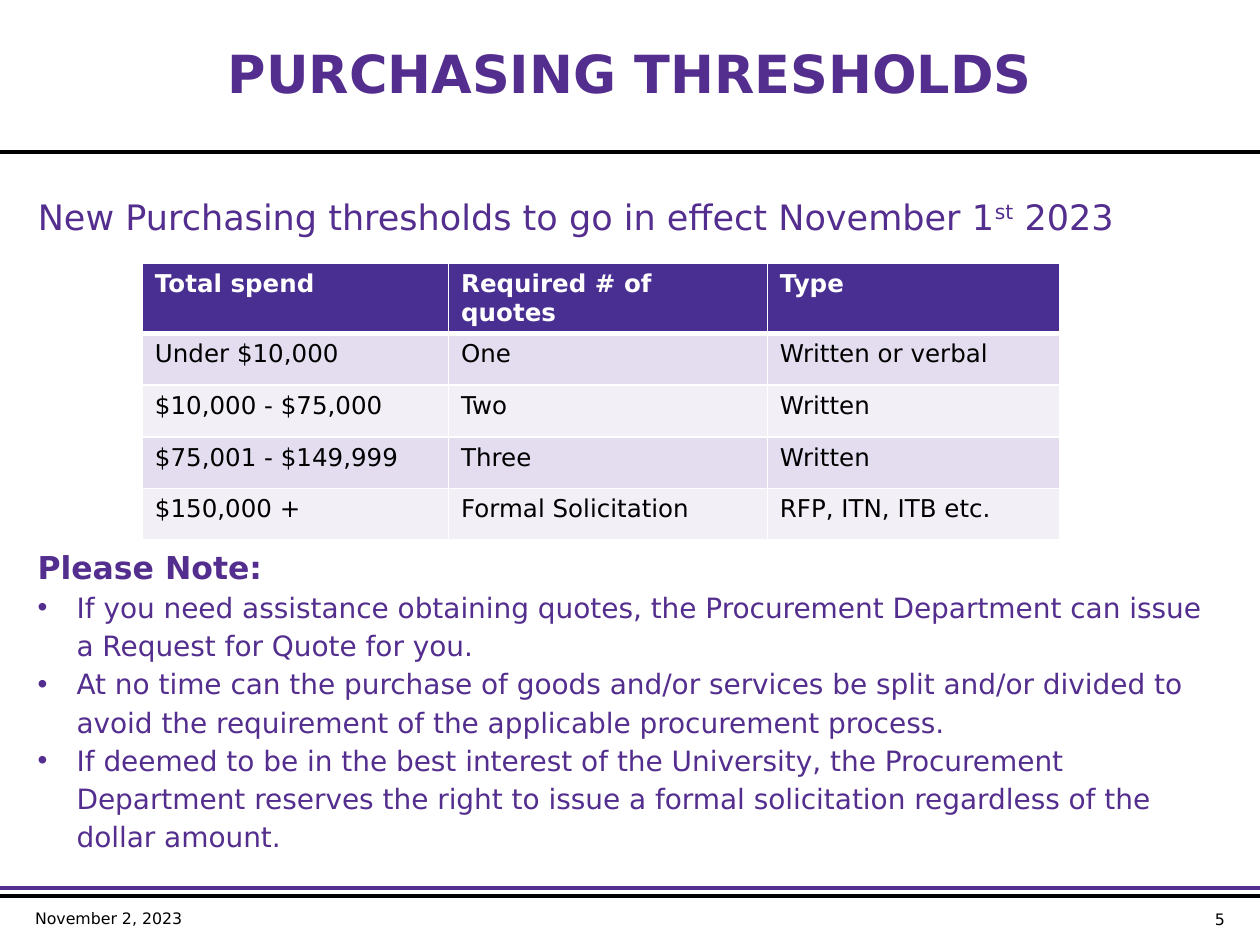
import dataclasses
import typing

import lxml.etree
import pptx
import pptx.dml.color
import pptx.enum.shapes
import pptx.enum.text
import pptx.oxml.ns
import pptx.util

Inches = pptx.util.Inches
Pt = pptx.util.Pt
Align = pptx.enum.text.PP_ALIGN
Anchor = pptx.enum.text.MSO_ANCHOR
qn = pptx.oxml.ns.qn


@dataclasses.dataclass(frozen=True)
class Theme:
    font: str = "DejaVu Sans"
    purple: str = "542E8E"
    header_fill: str = "492F92"
    band_fills: tuple = ("E3DDEF", "F2EFF7")
    black: str = "000000"
    white: str = "FFFFFF"
    title_size: float = 30
    lead_size: float = 20
    note_size: float = 18
    bullet_size: float = 16
    table_size: float = 14
    footer_size: float = 9
    rule_width: float = 2.25


class Rule(typing.NamedTuple):
    left: float
    right: float
    top: float
    color: str


class Footer(typing.NamedTuple):
    left: float
    top: float
    width: float
    text: str
    align: typing.Any


THEME = Theme()
RULES = [
    Rule(0, 10, 1.21, THEME.black),
    Rule(-0.01, 10.01, 7.11, THEME.black),
    Rule(0, 10.01, 7.05, THEME.purple),
]
FOOTERS = [
    Footer(0.18, 7.16, 2.64, "November 2, 2023", Align.LEFT),
    Footer(8.07, 7.17, 1.75, "5", Align.RIGHT),
]
COLUMN_WIDTHS = [2.43, 2.53, 2.32]
ROW_HEIGHT = 0.41
THRESHOLDS = [
    ("Total spend", "Required # of quotes", "Type"),
    ("Under $10,000", "One", "Written or verbal"),
    ("$10,000 - $75,000", "Two", "Written"),
    ("$75,001 - $149,999", "Three", "Written"),
    ("$150,000 +", "Formal Solicitation", "RFP, ITN, ITB etc."),
]
NOTES = [
    "If you need assistance obtaining quotes, the Procurement Department can issue "
    "a Request for Quote for you.",
    "At no time can the purchase of goods and/or services be split and/or divided to "
    "avoid the requirement of the applicable procurement process.",
    "If deemed to be in the best interest of the University, the Procurement "
    "Department reserves the right to issue a formal solicitation regardless of the "
    "dollar amount.",
]


def rgb(color: str) -> pptx.dml.color.RGBColor:
    return pptx.dml.color.RGBColor.from_string(color)


def write(para, text: str, *, size: float, color: str = THEME.purple, bold: bool = False,
          align=Align.LEFT, line_spacing: float = 1.0, baseline: int = 0) -> None:
    """Append one formatted span to a paragraph; baseline is a percentage."""
    para.alignment = align
    para.line_spacing = line_spacing
    para.space_before = Pt(0)
    span = para.add_run()
    span.text = text
    span.font.name = THEME.font
    span.font.size = Pt(size)
    span.font.bold = bold
    span.font.color.rgb = rgb(color)
    if baseline:
        span.font._element.set("baseline", str(baseline * 1000))


def set_bullet(para, character: str = "", indent: float = 0) -> None:
    """Give a paragraph a hanging bullet, or none when no character is given."""
    properties = para._p.get_or_add_pPr()
    properties.set("marL", str(Inches(indent)))
    properties.set("indent", str(-Inches(indent)))
    if character:
        font = lxml.etree.SubElement(properties, qn("a:buFont"))
        font.set("typeface", "Arial")
        lxml.etree.SubElement(properties, qn("a:buChar")).set("char", character)
    else:
        lxml.etree.SubElement(properties, qn("a:buNone"))


def place(shape, left: float, top: float, width: float, height: float,
          anchor=Anchor.TOP):
    """Position a shape and return its prepared text frame."""
    shape.left, shape.top = Inches(left), Inches(top)
    shape.width, shape.height = Inches(width), Inches(height)
    frame = shape.text_frame
    frame.word_wrap = True
    frame.auto_size = pptx.enum.text.MSO_AUTO_SIZE.NONE
    frame.vertical_anchor = anchor
    return frame


def add_text_box(slide, left: float, top: float, width: float, height: float):
    return place(slide.shapes.add_textbox(0, 0, 0, 0), left, top, width, height)


def draw_rule(slide, rule: Rule) -> None:
    line = slide.shapes.add_connector(
        pptx.enum.shapes.MSO_CONNECTOR.STRAIGHT,
        Inches(rule.left), Inches(rule.top), Inches(rule.right), Inches(rule.top))
    line.line.color.rgb = rgb(rule.color)
    line.line.width = Pt(THEME.rule_width)
    lxml.etree.SubElement(line._element.spPr, qn("a:effectLst"))


def draw_footer(slide, footer: Footer) -> None:
    frame = add_text_box(slide, footer.left, footer.top, footer.width, 0.25)
    write(frame.paragraphs[0], footer.text, size=THEME.footer_size,
          color=THEME.black, align=footer.align)


def set_borders(cell, bottom_width: float) -> None:
    properties = cell._tc.get_or_add_tcPr()
    for side, width in (("L", 1), ("R", 1), ("T", 1), ("B", bottom_width)):
        border = lxml.etree.SubElement(properties, qn("a:ln" + side))
        border.set("w", str(Pt(width)))
        fill = lxml.etree.SubElement(border, qn("a:solidFill"))
        lxml.etree.SubElement(fill, qn("a:srgbClr")).set("val", THEME.white)


def draw_thresholds(slide) -> None:
    table = slide.shapes.add_table(
        len(THRESHOLDS), len(COLUMN_WIDTHS), Inches(1.13), Inches(2.09),
        Inches(sum(COLUMN_WIDTHS)), Inches(ROW_HEIGHT * len(THRESHOLDS))).table
    for column, width in zip(table.columns, COLUMN_WIDTHS):
        column.width = Inches(width)
    for index, (row, values) in enumerate(zip(table.rows, THRESHOLDS)):
        row.height = Inches(ROW_HEIGHT)
        header = index == 0
        fill = THEME.header_fill if header else THEME.band_fills[(index - 1) % 2]
        for cell, value in zip(row.cells, values):
            set_borders(cell, 3 if header else 1)
            cell.fill.solid()
            cell.fill.fore_color.rgb = rgb(fill)
            write(cell.text_frame.paragraphs[0], value, size=THEME.table_size,
                  color=THEME.white if header else THEME.black, bold=header)


def draw_notes(slide) -> None:
    frame = add_text_box(slide, 0.2, 4.3, 9.5, 2.52)
    write(frame.paragraphs[0], "Please Note:", size=THEME.note_size, bold=True)
    for note in NOTES:
        para = frame.add_paragraph()
        set_bullet(para, "•", 0.31)
        write(para, note, size=THEME.bullet_size, line_spacing=1.14)


def main() -> None:
    deck = pptx.Presentation()
    deck.slide_width, deck.slide_height = Inches(10), Inches(7.5)
    page = deck.slides.add_slide(deck.slide_layouts[1])

    title = place(page.shapes.title, 0, 0, 10, 1.23, Anchor.MIDDLE)
    write(title.paragraphs[0], "PURCHASING THRESHOLDS", size=THEME.title_size,
          bold=True, align=Align.CENTER, line_spacing=0.85)

    lead = place(page.placeholders[1], 0.2, 1.5, 9.5, 1.5).paragraphs[0]
    set_bullet(lead)
    for text, baseline in (("New Purchasing thresholds to go in effect November 1", 0),
                           ("st", 30), (" 2023", 0)):
        write(lead, text, size=THEME.lead_size, baseline=baseline)

    for rule in RULES:
        draw_rule(page, rule)
    for footer in FOOTERS:
        draw_footer(page, footer)
    draw_thresholds(page)
    draw_notes(page)
    deck.save("out.pptx")


if __name__ == "__main__":
    main()
